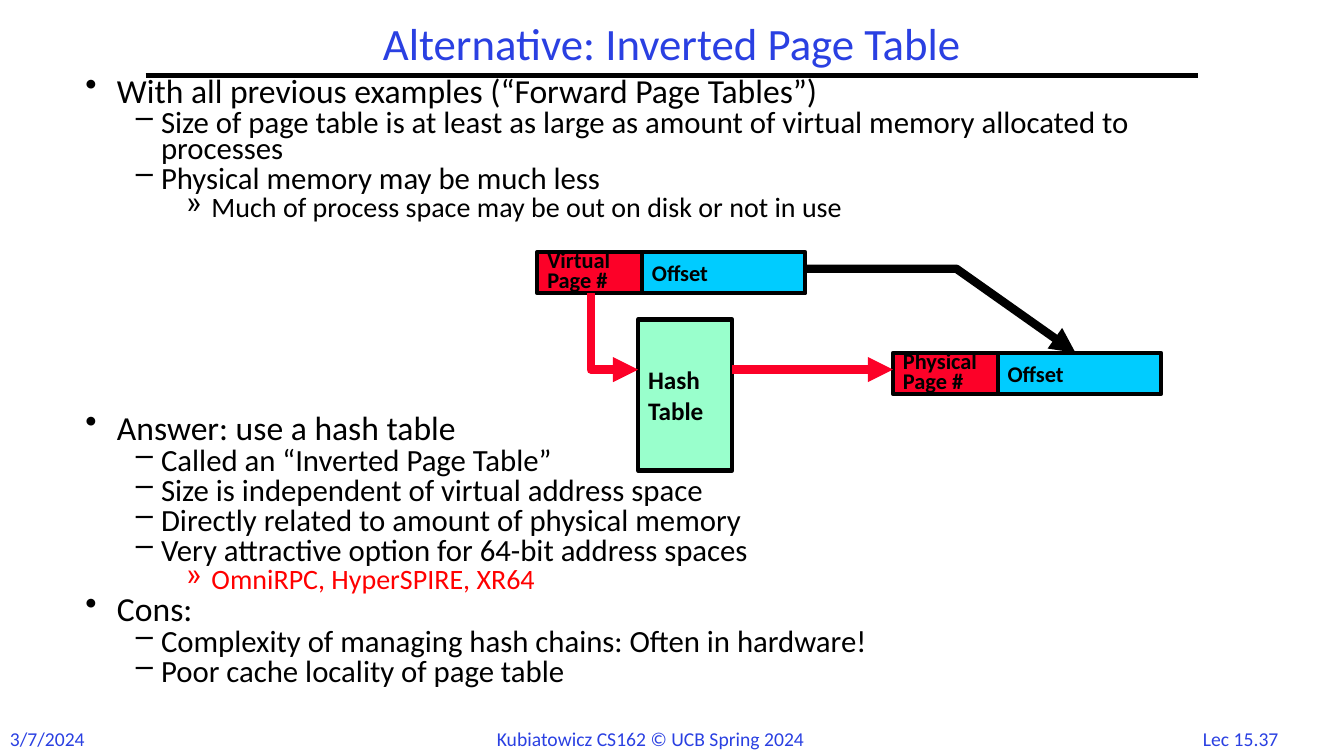
"""Build the slide about inverted page tables."""
from lxml.etree import SubElement
from pptx import Presentation
from pptx.dml.color import RGBColor
from pptx.enum.shapes import MSO_CONNECTOR, MSO_SHAPE
from pptx.enum.text import MSO_ANCHOR, PP_ALIGN
from pptx.oxml.ns import qn
from pptx.util import Pt

FONT = "Calibri"
BLUE, BLACK, RED, CYAN, MINT = "2A40E2", "000000", "FC0128", "00CCFF", "99FFCC"
TITLE = "Alternative: Inverted Page Table"
FOOTERS = [
    ("3/7/2024", 0, 69, PP_ALIGN.LEFT),
    ("Kubiatowicz CS162 © UCB Spring 2024", 347.8, 265, PP_ALIGN.LEFT),
    ("Lec 15.37", 847.4, 77.8, PP_ALIGN.CENTER),
]
DIAGRAM_GAP = 139.5
LEVELS = [("•", 24, 22.5, 22.5), ("–", 22, 54, 18), ("»", 20, 90, 18)]
OUTLINE = [
    (0, "With all previous examples (“Forward Page Tables”)", BLACK, None),
    (1, "Size of page table is at least as large as amount of virtual memory "
        "allocated to processes", BLACK, None),
    (1, "Physical memory may be much less", BLACK, None),
    (2, "Much of process space may be out on disk or not in use", BLACK, None),
    (0, "Answer: use a hash table", BLACK, DIAGRAM_GAP),
    (1, "Called an “Inverted Page Table”", BLACK, None),
    (1, "Size is independent of virtual address space", BLACK, None),
    (1, "Directly related to amount of physical memory", BLACK, None),
    (1, "Very attractive option for 64-bit address spaces", BLACK, None),
    (2, "OmniRPC, HyperSPIRE, XR64", "FF0000", None),
    (0, "Cons:", BLACK, None),
    (1, "Complexity of managing hash chains: Often in hardware!", BLACK, None),
    (1, "Poor cache locality of page table", BLACK, None),
]
ADDRESSES = [("Virtual", 383.8, 180), ("Physical", 637.9, 252)]
PAGE_WIDTH, OFFSET_WIDTH, ADDRESS_HEIGHT = 74.8, 116.6, 29.5
HASH_TABLE = (455.8, 228.2, 67.2, 108)


def color(value):
    return RGBColor.from_string(value)


def add_run(paragraph, text, size, ink, bold=False):
    run = paragraph.add_run()
    run.text = text
    run.font.name = FONT
    run.font.size = Pt(size)
    run.font.bold = bold
    run.font.color.rgb = color(ink)


def add_text_box(slide, left, top, width, height, wrap=True):
    box = slide.shapes.add_textbox(Pt(left), Pt(top), Pt(width), Pt(height))
    box.text_frame.word_wrap = wrap
    return box.text_frame


def add_label_box(slide, lines, bounds, fill, size, spacing=1.0):
    shape = slide.shapes.add_shape(MSO_SHAPE.RECTANGLE, *map(Pt, bounds))
    shape.shadow.inherit = False
    shape.fill.solid()
    shape.fill.fore_color.rgb = color(fill)
    shape.line.color.rgb = color(BLACK)
    shape.line.width = Pt(3)
    frame = shape.text_frame
    frame.word_wrap = False
    frame.vertical_anchor = MSO_ANCHOR.MIDDLE
    for index, line in enumerate(lines):
        paragraph = frame.add_paragraph() if index else frame.paragraphs[0]
        paragraph.alignment = PP_ALIGN.LEFT
        paragraph.line_spacing = spacing
        add_run(paragraph, line, size, BLACK, True)


def style_line(shape, ink, width, arrow=True):
    shape.line.color.rgb = color(ink)
    shape.line.width = Pt(width)
    if arrow:
        line = shape.line._get_or_add_ln()
        SubElement(line, qn("a:round"))
        SubElement(line, qn("a:tailEnd"), type="triangle")


def add_straight(slide, start, end, ink, width, arrow=True):
    connector = slide.shapes.add_connector(
        MSO_CONNECTOR.STRAIGHT, *map(Pt, start + end))
    style_line(connector, ink, width, arrow)
    SubElement(connector._element.spPr, qn("a:effectLst"))


def add_bent_arrow(slide, points, ink):
    corners = [(Pt(x), Pt(y)) for x, y in points]
    builder = slide.shapes.build_freeform(*corners[0])
    builder.add_line_segments(corners[1:], close=False)
    shape = builder.convert_to_shape()
    shape.shadow.inherit = False
    shape.fill.background()
    style_line(shape, ink, 6)


def add_outline(slide):
    frame = add_text_box(slide, 54, 54, 822, 486)
    for index, (level, text, ink, gap) in enumerate(OUTLINE):
        bullet, size, margin, hanging = LEVELS[level]
        paragraph = frame.add_paragraph() if index else frame.paragraphs[0]
        paragraph.level = level
        paragraph.line_spacing = 0.7
        paragraph.space_before = Pt(gap or size * 0.14)
        properties = paragraph._p.get_or_add_pPr()
        properties.set("marL", str(Pt(margin)))
        properties.set("indent", str(-Pt(hanging)))
        SubElement(properties, qn("a:buChar"), char=bullet)
        add_run(paragraph, text, size, ink)


def add_diagram(slide):
    for kind, left, top in ADDRESSES:
        add_label_box(slide, ["Offset"],
                      (left + PAGE_WIDTH, top, OFFSET_WIDTH, ADDRESS_HEIGHT), CYAN, 16)
        add_label_box(slide, [kind, "Page #"],
                      (left, top, PAGE_WIDTH, ADDRESS_HEIGHT), RED, 16, 0.75)
    add_label_box(slide, ["Hash", "Table"], HASH_TABLE, MINT, 18)

    (_, virtual_left, virtual_top), (_, physical_left, physical_top) = ADDRESSES
    hash_left, _, hash_width, _ = HASH_TABLE
    lookup_y = physical_top + 12
    page_x = virtual_left + PAGE_WIDTH / 2 + 0.8
    virtual_right = virtual_left + PAGE_WIDTH + OFFSET_WIDTH
    offset_x = physical_left + PAGE_WIDTH + 55.5
    add_bent_arrow(slide, [(page_x, virtual_top + ADDRESS_HEIGHT),
                           (page_x, lookup_y), (hash_left, lookup_y)], RED)
    add_straight(slide, (hash_left + hash_width, lookup_y),
                 (physical_left, lookup_y), RED, 6)
    add_bent_arrow(slide, [(virtual_right, virtual_top + 12),
                           (virtual_right + 108, virtual_top + 12),
                           (offset_x, physical_top)], BLACK)


def main():
    presentation = Presentation()
    presentation.slide_width, presentation.slide_height = Pt(960), Pt(540)
    slide = presentation.slides.add_slide(presentation.slide_layouts[6])
    for text, left, width, alignment in FOOTERS:
        paragraph = add_text_box(slide, left, 515.5, width, 24.2, False).paragraphs[0]
        paragraph.alignment = alignment
        add_run(paragraph, text, 14, BLUE)
    add_straight(slide, (104, 54), (856, 54), BLACK, 3, False)
    add_outline(slide)
    title = add_text_box(slide, 104, 12, 752, 42)
    title.vertical_anchor = MSO_ANCHOR.MIDDLE
    title.paragraphs[0].alignment = PP_ALIGN.CENTER
    title.paragraphs[0].line_spacing = 0.9
    add_run(title.paragraphs[0], TITLE, 32, BLUE)
    add_diagram(slide)
    presentation.save("out.pptx")


if __name__ == "__main__":
    main()
